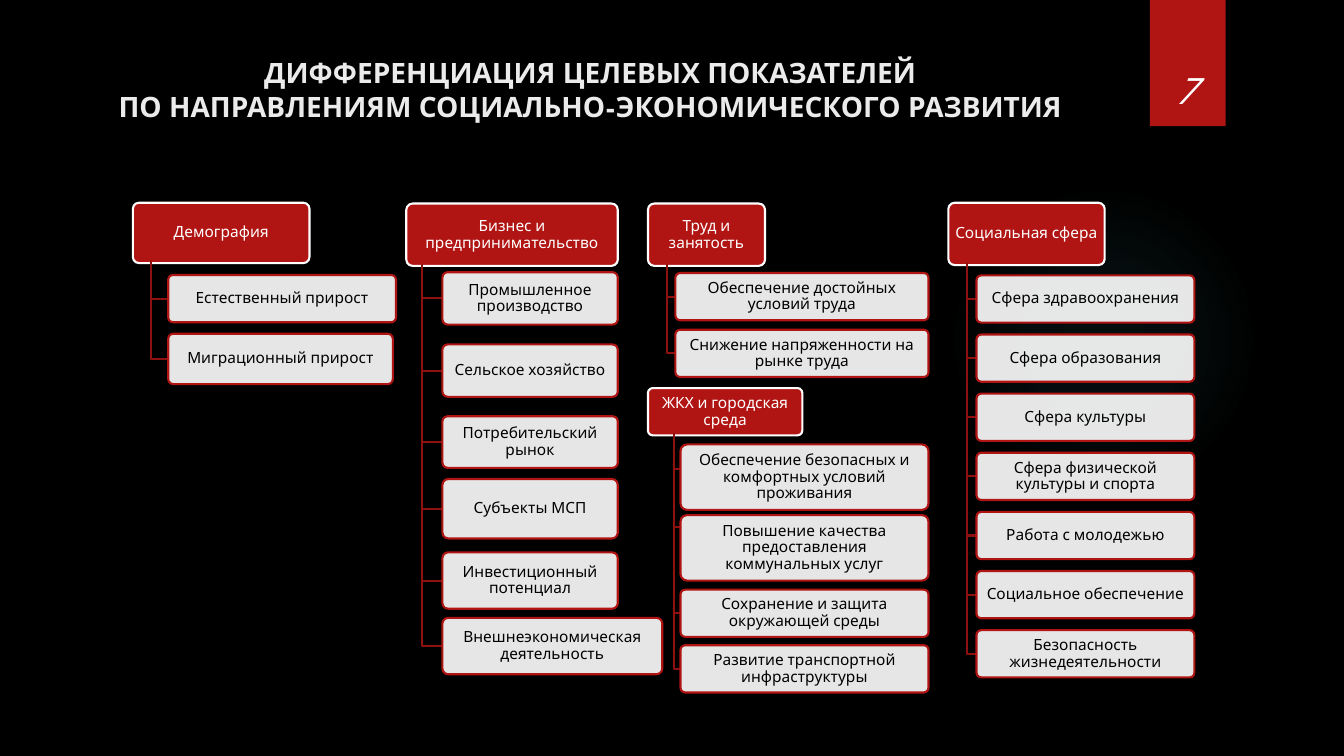
from lxml import etree
from pptx import Presentation
from pptx import util as u
from pptx.dml.color import RGBColor
from pptx.enum import shapes, text
from pptx.oxml import parse_xml
from pptx.oxml.ns import qn

FONT = "League Spartan"
RED, DARK, WHITE, BLACK = "B01513", "8D110F", "FFFFFF", "000000"
RECT = shapes.MSO_SHAPE.RECTANGLE
ROUND = shapes.MSO_SHAPE.ROUNDED_RECTANGLE
OVAL = shapes.MSO_SHAPE.OVAL
NS = "http://schemas.openxmlformats.org/drawingml/2006/main"


def rgb(code):
    """Return the colour for a hex string."""
    return RGBColor.from_string(code)


def write(shape, words, size=11, color=BLACK, bold=False, italic=False,
          anchor=text.MSO_ANCHOR.MIDDLE, inset=(0.12, 0.1), space=0.9):
    """Put centred text into a shape."""
    frame = shape.text_frame
    frame.word_wrap = True
    frame.auto_size = text.MSO_AUTO_SIZE.NONE
    frame.vertical_anchor = anchor
    frame.margin_left = frame.margin_right = u.Cm(inset[0])
    frame.margin_top = frame.margin_bottom = u.Cm(inset[1])
    para = frame.paragraphs[0]
    para.text = words
    para.alignment = text.PP_ALIGN.CENTER
    para.line_spacing = space
    para.space_before = u.Pt(0)
    for run in para.runs:
        font = run.font
        font.name, font.size = FONT, u.Pt(size)
        font.bold, font.italic = bold, italic
        font.color.rgb = rgb(color)


def block(slide, kind, box, fill, line=None, alpha=None):
    """Add a filled preset shape."""
    shape = slide.shapes.add_shape(kind, *map(u.Cm, box))
    shape.shadow.inherit = False
    shape.fill.solid()
    shape.fill.fore_color.rgb = rgb(fill)
    if alpha:
        tint = shape.fill._xPr.find(".//" + qn("a:srgbClr"))
        etree.SubElement(tint, qn("a:alpha")).set("val", str(alpha * 1000))
    if line:
        shape.line.color.rgb = rgb(line)
        shape.line.width = u.Pt(1.5)
    else:
        shape.line.fill.background()
    return shape


def card(slide, box, words, fill, line, color, **more):
    """Add a rounded box with its label."""
    shape = block(slide, ROUND, box, fill, line, **more)
    shape.adjustments[0] = 0.1
    write(shape, words, color=color)


def elbow(slide, x, top, end, y):
    """Draw a line down a trunk and across to a box."""
    path = slide.shapes.build_freeform(u.Cm(x), u.Cm(top))
    path.add_line_segments([(u.Cm(x), u.Cm(y)), (u.Cm(end), u.Cm(y))],
                           close=False)
    shape = path.convert_to_shape()
    shape.shadow.inherit = False
    shape.fill.background()
    shape.line.color.rgb = rgb(DARK)
    shape.line.width = u.Pt(1.5)


def branch(slide, box, head, trunk, left, width, items):
    """Draw a heading with a tree of items below it."""
    x, y, _, high = box
    card(slide, box, head, RED, WHITE, WHITE)
    for drop, tall, words, *rest in items:
        wide, tick = rest or (width, 0.5)
        top = y + drop
        elbow(slide, x + trunk, y + high - 0.05, x + left, top + tall * tick)
        card(slide, (x + left, top, wide, tall), words, WHITE, RED, BLACK,
             alpha=90)


def glow(slide, box):
    """Add a faint round glow."""
    shape = block(slide, OVAL, box, "50B9C1")
    stops = "".join(
        f'<a:gs pos="{pos}000"><a:srgbClr val="50B9C1">'
        f'<a:alpha val="{alpha}000"/></a:srgbClr></a:gs>'
        for pos, alpha in ((0, 7), (36, 6), (69, 0)))
    grad = parse_xml(
        f'<a:gradFill xmlns:a="{NS}"><a:gsLst>{stops}</a:gsLst>'
        '<a:path path="circle"><a:fillToRect l="50000" t="50000" '
        'r="50000" b="50000"/></a:path></a:gradFill>')
    solid = shape.fill._xPr.find(qn("a:solidFill"))
    solid.getparent().replace(solid, grad)


def badge(slide, box, label):
    """Add the page tab with its number."""
    tab = block(slide, RECT, box, RED)
    write(tab, label, 28, WHITE, italic=True, space=1,
          anchor=text.MSO_ANCHOR.BOTTOM, inset=(0.1, 0.36))


def title(slide, box, words):
    """Place and format the slide title."""
    shape = slide.shapes.title
    shape.left, shape.top, shape.width, shape.height = map(u.Cm, box)
    write(shape, words, 20, "EBEBEB", bold=True, space=1,
          anchor=text.MSO_ANCHOR.TOP, inset=(0.25, 0.13))


def main():
    """Build and save the slide."""
    deck = Presentation()
    deck.slide_width, deck.slide_height = u.Cm(33.87), u.Cm(19.05)
    slide = deck.slides.add_slide(deck.slide_layouts[5])
    slide.background.fill.solid()
    slide.background.fill.fore_color.rgb = rgb(BLACK)

    glow(slide, (23.9, 4.65, 7.82, 7.82))
    badge(slide, (28.98, 0, 1.91, 3.18), "7")
    title(slide, (1.8, 1.27, 26.14, 2.49),
          "ДИФФЕРЕНЦИАЦИЯ ЦЕЛЕВЫХ ПОКАЗАТЕЛЕЙ\v"
          "ПО НАПРАВЛЕНИЯМ СОЦИАЛЬНО-ЭКОНОМИЧЕСКОГО РАЗВИТИЯ")

    branch(slide, (3.35, 5.11, 4.45, 1.52), "Демография", 0.46, 0.89, 5.74, [
        (1.82, 1.19, "Естественный прирост"),
        (3.3, 1.27, "Миграционный прирост", 5.66, 0.5)])
    branch(slide, (10.24, 5.13, 5.33, 1.57), "Бизнес и предпринимательство",
           0.4, 0.91, 4.42, [
               (1.73, 1.32, "Промышленное производство"),
               (3.55, 1.32, "Сельское хозяйство"),
               (5.36, 1.3, "Потребительский рынок"),
               (6.94, 1.5, "Субъекты МСП"),
               (8.79, 1.42, "Инвестиционный потенциал"),
               (10.44, 1.42, "Внешнеэкономическая деятельность",
                5.54, 0.5)])
    branch(slide, (16.33, 5.13, 2.95, 1.57), "Труд и занятость",
           0.48, 0.69, 6.38, [
               (1.75, 1.19, "Обеспечение достойных условий труда"),
               (3.18, 1.19, "Снижение напряженности на рынке труда")])
    branch(slide, (16.33, 9.78, 3.89, 1.19), "ЖКХ и городская среда",
           0.66, 0.82, 6.25, [
               (1.42, 1.65, "Обеспечение безопасных и комфортных условий "
                "проживания", 6.25, 0.37),
               (3.2, 1.65, "Повышение качества предоставления "
                "коммунальных услуг", 6.25, 0.18),
               (5.08, 1.19, "Сохранение и защита окружающей среды"),
               (6.48, 1.19, "Развитие транспортной инфраструктуры")])
    social = ["Сфера здравоохранения", "Сфера образования", "Сфера культуры",
              "Сфера физической культуры и спорта", "Работа с молодежью",
              "Социальное обеспечение", "Безопасность жизнедеятельности"]
    branch(slide, (23.9, 5.11, 3.94, 1.57), "Социальная сфера",
           0.46, 0.71, 5.49,
           [(1.83 + 1.49 * i, 1.19, words) for i, words in enumerate(social)])
    deck.save("out.pptx")


if __name__ == "__main__":
    main()
